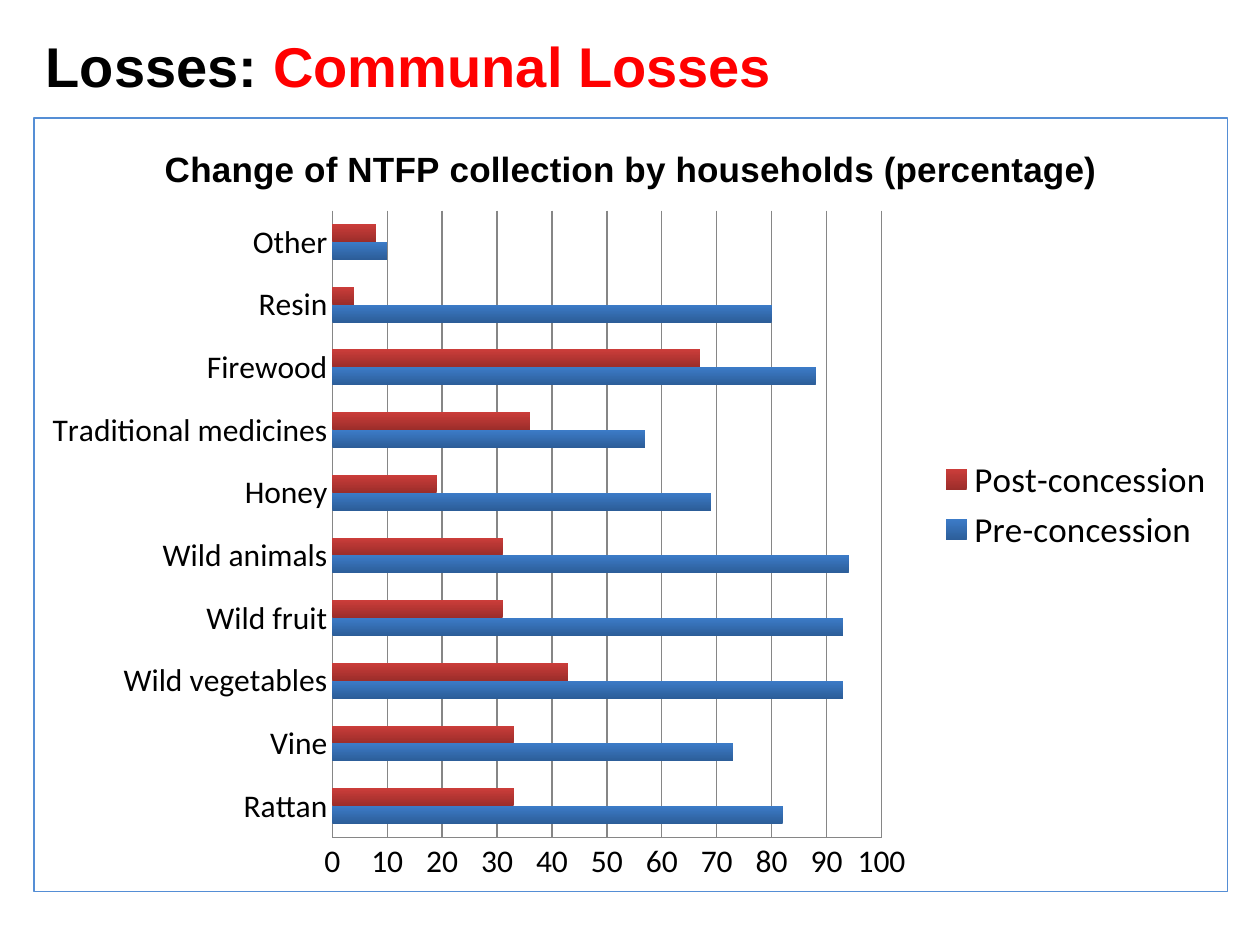
from lxml import etree
from pptx import Presentation
from pptx.chart.data import CategoryChartData
from pptx.dml.color import RGBColor
from pptx.enum import chart as ch, text
from pptx.oxml import parse_xml
from pptx.oxml.ns import nsdecls, qn
from pptx.util import Pt

HEADING = [("Losses: ", "black"), ("Communal Losses", "red")]
CHART_TITLE = "Change of NTFP collection by households (percentage)"
COLLECTION = [
    ("Rattan", 82, 33),
    ("Vine", 73, 33),
    ("Wild vegetables", 93, 43),
    ("Wild fruit", 93, 31),
    ("Wild animals", 94, 31),
    ("Honey", 69, 19),
    ("Traditional medicines", 57, 36),
    ("Firewood", 88, 67),
    ("Resin", 80, 4),
    ("Other", 10, 8),
]
PERIODS = [
    ("Pre-concession", "blue_dark", "blue"),
    ("Post-concession", "red_dark", "red_light"),
]
COLORS = {
    "black": "000000", "red": "FF0000", "grey": "868686", "border": "558ED5",
    "blue_dark": "2C5D98", "blue": "3C7BC7",
    "red_dark": "9B2D2A", "red_light": "CB3D3A",
}
PLOT_AREA = {"x": 0.25, "y": 0.12, "w": 0.46, "h": 0.81}


def rgb(name):
    return RGBColor.from_string(COLORS[name])


def style(font, size, face, color="black", bold=False):
    font.size, font.name, font.bold = Pt(size), face, bold
    font.color.rgb = rgb(color)


def add_heading(slide):
    heading = slide.shapes.title
    heading.left, heading.top, heading.width, heading.height = Pt(19), Pt(7), Pt(672), Pt(60)
    frame = heading.text_frame
    frame.vertical_anchor = text.MSO_ANCHOR.MIDDLE
    frame.paragraphs[0].alignment = text.PP_ALIGN.LEFT
    for words, color in HEADING:
        run = frame.paragraphs[0].add_run()
        run.text = words
        style(run.font, 32, "Arial", color, True)


def add_collection_chart(slide):
    names, *percentages = zip(*COLLECTION)
    data = CategoryChartData()
    data.categories = names
    for (period, *_), values in zip(PERIODS, percentages):
        data.add_series(period, values)
    chart = slide.shapes.add_chart(
        ch.XL_CHART_TYPE.BAR_CLUSTERED, Pt(19), Pt(67), Pt(683), Pt(443), data).chart
    style(chart.font, 10, "Calibri")

    chart.has_title = True
    chart.chart_title.include_in_layout = False
    title = chart.chart_title.text_frame.paragraphs[0]
    title.text = CHART_TITLE
    style(title.runs[0].font, 20, "Arial", bold=True)

    chart.has_legend = True
    chart.legend.position = ch.XL_LEGEND_POSITION.RIGHT
    chart.legend.include_in_layout = False
    style(chart.legend.font, 20, "Calibri")

    for axis in (chart.category_axis, chart.value_axis):
        axis.major_tick_mark = axis.minor_tick_mark = ch.XL_TICK_MARK.NONE
        style(axis.tick_labels.font, 18, "Calibri")
        axis.format.line.color.rgb = rgb("grey")
    scale = chart.value_axis
    scale.minimum_scale, scale.maximum_scale, scale.major_unit = 0, 100, 10
    scale.has_major_gridlines = True
    scale.major_gridlines.format.line.color.rgb = rgb("grey")

    plot = chart.plots[0]
    plot.gap_width, plot.overlap, plot.vary_by_categories = 150, 0, False
    for series, (_, dark, light) in zip(plot.series, PERIODS):
        fill = series.format.fill
        fill.gradient()
        fill.gradient_angle = 90
        for stop, color in zip(fill.gradient_stops, (dark, light)):
            stop.color.rgb = rgb(color)
    place_plot_area(chart)
    add_border(chart)


def place_plot_area(chart):
    area = chart._chartSpace.chart.plotArea
    for old in area.findall(qn("c:layout")):
        area.remove(old)
    layout = parse_xml(f"<c:layout {nsdecls('c')}><c:manualLayout/></c:layout>")
    settings = [("layoutTarget", "inner"), ("xMode", "edge"), ("yMode", "edge"), *PLOT_AREA.items()]
    for tag, value in settings:
        etree.SubElement(layout[0], qn(f"c:{tag}")).set("val", str(value))
    area.insert(0, layout)


def add_border(chart):
    chart._chartSpace.chart.addnext(parse_xml(
        f'<c:spPr {nsdecls("c", "a")}><a:noFill/><a:ln w="{Pt(0.75)}"><a:solidFill>'
        f'<a:srgbClr val="{COLORS["border"]}"/></a:solidFill></a:ln></c:spPr>'))


def main():
    deck = Presentation()
    deck.slide_width, deck.slide_height = Pt(720), Pt(540)
    slide = deck.slides.add_slide(deck.slide_layouts[5])
    add_heading(slide)
    add_collection_chart(slide)
    deck.save("out.pptx")


if __name__ == "__main__":
    main()
